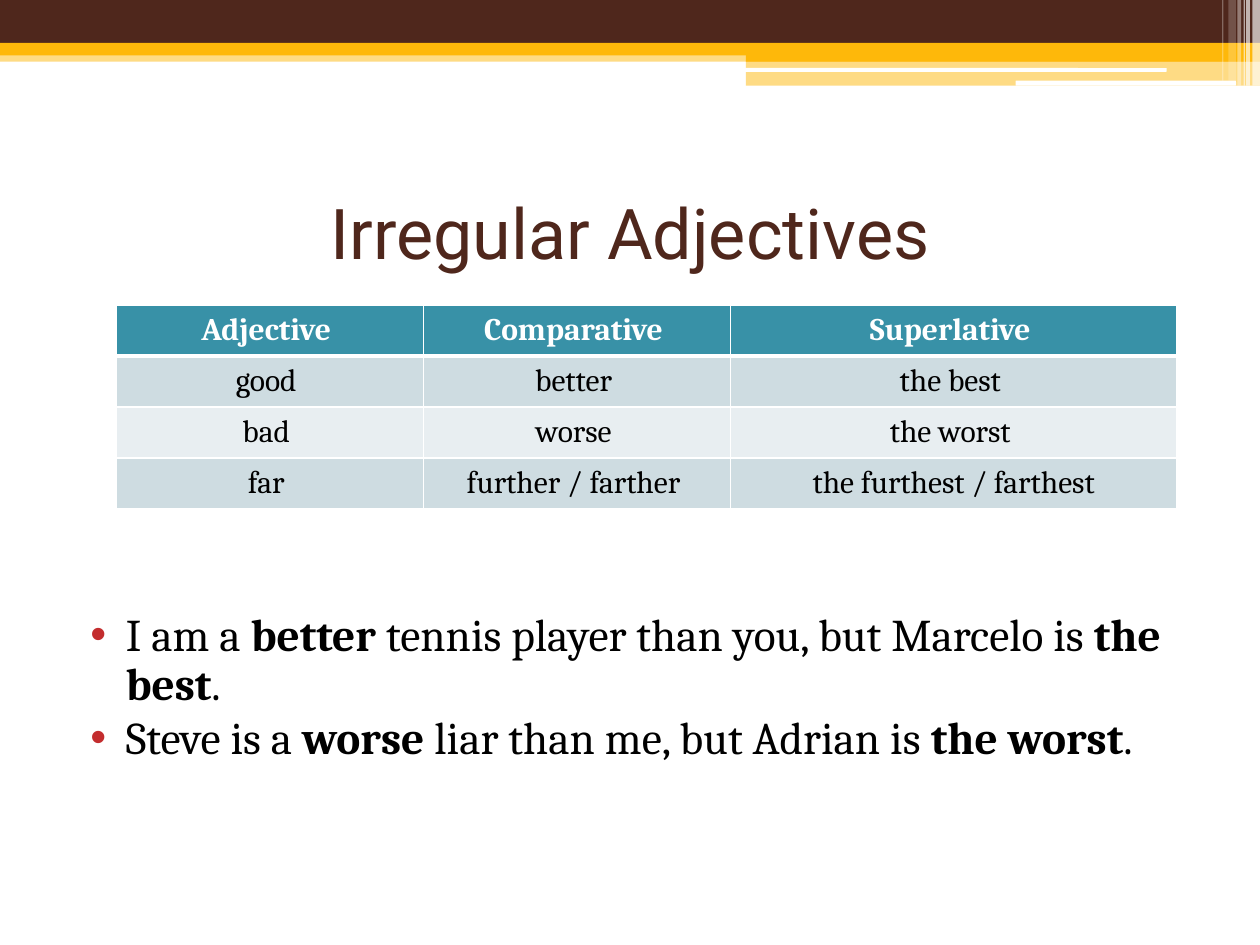
import pptx
import pptx.dml.color
import pptx.enum.shapes
import pptx.enum.text
import pptx.oxml
import pptx.oxml.ns
import pptx.util
from pptx.util import Inches

BROWN, GOLD, WHITE, BLACK = "4F271C", "FEB80A", "FFFFFF", "000000"
TEAL, PALE_BLUE, PALE_GREY, RED = "3891A7", "CEDCE1", "E8EEF1", "C32D2E"
CENTER = pptx.enum.text.PP_ALIGN.CENTER
MIDDLE = pptx.enum.text.MSO_ANCHOR.MIDDLE
RECT = pptx.enum.shapes.MSO_SHAPE.RECTANGLE
ROUNDED = pptx.enum.shapes.MSO_SHAPE.ROUNDED_RECTANGLE

# left, top, width, height, colour, opacity in percent
BANDS = [
    (0, 0.4, 10, 0.09, GOLD, 50),
    (0, 0, 10, 0.34, BROWN, 100),
    (0, 0.34, 10, 0.1, GOLD, 100),
    (5.92, 0.39, 4.08, 0.1, GOLD, 100),
    (5.92, 0.48, 4.08, 0.2, GOLD, 50),
]
WHITE_BARS = [(5.91, 0.54, 3.35, 0.03), (8.06, 0.64, 1.75, 0.04)]
# left, width, height, opacity in percent
STRIPES = [
    (9.94, 0.06, 0.68, 65),
    (9.89, 0.03, 0.68, 65),
    (9.87, 0.01, 0.68, 60),
    (9.82, 0.03, 0.68, 40),
    (9.75, 0.06, 0.64, 20),
    (9.7, 0.01, 0.64, 30),
]
COLUMN_WIDTHS = [2.44, 2.44, 3.54]
ROW_HEIGHT = 0.405
ADJECTIVES = [
    ("Adjective ", "Comparative ", "Superlative "),
    ("good ", "better ", "the best "),
    ("bad ", "worse ", "the worst "),
    ("far ", "further / farther ", "the furthest / farthest"),
]
# Runs alternate between regular and bold
EXAMPLES = [
    ("I am a ", "better", " tennis player than you, but Marcelo is ", "the best", "."),
    ("Steve is a ", "worse", " liar than me, but Adrian is ", "the worst", "."),
]


def rgb(color):
    return pptx.dml.color.RGBColor.from_string(color)


def add_xml(parent, xml):
    declaration = pptx.oxml.ns.nsdecls("a")
    parent.append(pptx.oxml.parse_xml(xml.replace(">", f" {declaration}>", 1)))


def add_bar(slide, left, top, width, height, color, opacity=100, kind=RECT):
    bar = slide.shapes.add_shape(
        kind, Inches(left), Inches(top), Inches(width), Inches(height))
    bar.shadow.inherit = False
    bar.line.fill.background()
    bar.fill.solid()
    bar.fill.fore_color.rgb = rgb(color)
    if opacity < 100:
        solid = bar._element.spPr.find(pptx.oxml.ns.qn("a:solidFill"))
        add_xml(solid[0], f'<a:alpha val="{opacity * 1000}"></a:alpha>')


def add_run(paragraph, text, size, font, color, bold=False):
    run = paragraph.add_run()
    run.text = text
    run.font.size = pptx.util.Pt(size)
    run.font.name = font
    run.font.bold = bold
    run.font.color.rgb = rgb(color)


def add_text_frame(slide, left, top, width, height):
    frame = slide.shapes.add_textbox(
        Inches(left), Inches(top), Inches(width), Inches(height)).text_frame
    frame.word_wrap = True
    return frame


def add_title(slide, text):
    frame = add_text_frame(slide, 0.5, 1.25, 9, 1.17)
    frame.vertical_anchor = MIDDLE
    frame.paragraphs[0].alignment = CENTER
    add_run(frame.paragraphs[0], text, 40, "Roboto", BROWN)


def style_cell(cell, text, fill, color, header):
    cell.vertical_anchor = MIDDLE
    cell.margin_top = cell.margin_bottom = 0
    paragraph = cell.text_frame.paragraphs[0]
    paragraph.alignment = CENTER
    add_run(paragraph, text, 18, "Cambria", color, header)
    properties = cell._tc.get_or_add_tcPr()
    for side in "LRTB":
        points = 3 if header and side == "B" else 1
        add_xml(properties,
                f'<a:ln{side} w="{pptx.util.Pt(points)}"><a:solidFill>'
                f'<a:srgbClr val="{WHITE}"/></a:solidFill></a:ln{side}>')
    cell.fill.solid()
    cell.fill.fore_color.rgb = rgb(fill)


def add_adjective_table(slide):
    table = slide.shapes.add_table(
        len(ADJECTIVES), len(COLUMN_WIDTHS), Inches(0.92), Inches(2.42),
        Inches(sum(COLUMN_WIDTHS)), Inches(ROW_HEIGHT * len(ADJECTIVES))).table
    table.horz_banding = False
    for column, width in zip(table.columns, COLUMN_WIDTHS):
        column.width = Inches(width)
    for i, words in enumerate(ADJECTIVES):
        table.rows[i].height = Inches(ROW_HEIGHT)
        header = i == 0
        fill = TEAL if header else (PALE_GREY, PALE_BLUE)[i % 2]
        for j, word in enumerate(words):
            style_cell(table.cell(i, j), word, fill,
                       WHITE if header else BLACK, header)


def add_examples(slide):
    frame = add_text_frame(slide, 0.5, 4.81, 9, 2.38)
    for i, parts in enumerate(EXAMPLES):
        paragraph = frame.add_paragraph() if i else frame.paragraphs[0]
        paragraph.space_before = pptx.util.Pt(3)
        paragraph.line_spacing = 0.9
        properties = paragraph._p.get_or_add_pPr()
        properties.set("marL", str(Inches(0.4)))
        properties.set("indent", str(Inches(-0.28)))
        add_xml(properties, f'<a:buClr><a:srgbClr val="{RED}"/></a:buClr>')
        add_xml(properties, '<a:buFont typeface="Arial"></a:buFont>')
        add_xml(properties, '<a:buChar char="•"></a:buChar>')
        for j, part in enumerate(parts):
            add_run(paragraph, part, 25.9, "Cambria", BLACK, j % 2 == 1)


def main():
    deck = pptx.Presentation()
    deck.slide_width, deck.slide_height = Inches(10), Inches(7.5)
    slide = deck.slides.add_slide(deck.slide_layouts[6])
    for band in BANDS:
        add_bar(slide, *band)
    for bar in WHITE_BARS:
        add_bar(slide, *bar, WHITE, kind=ROUNDED)
    for left, width, height, opacity in STRIPES:
        add_bar(slide, left, 0, width, height, WHITE, opacity)
    add_title(slide, "Irregular Adjectives")
    add_examples(slide)
    add_adjective_table(slide)
    deck.save("out.pptx")


if __name__ == "__main__":
    main()
